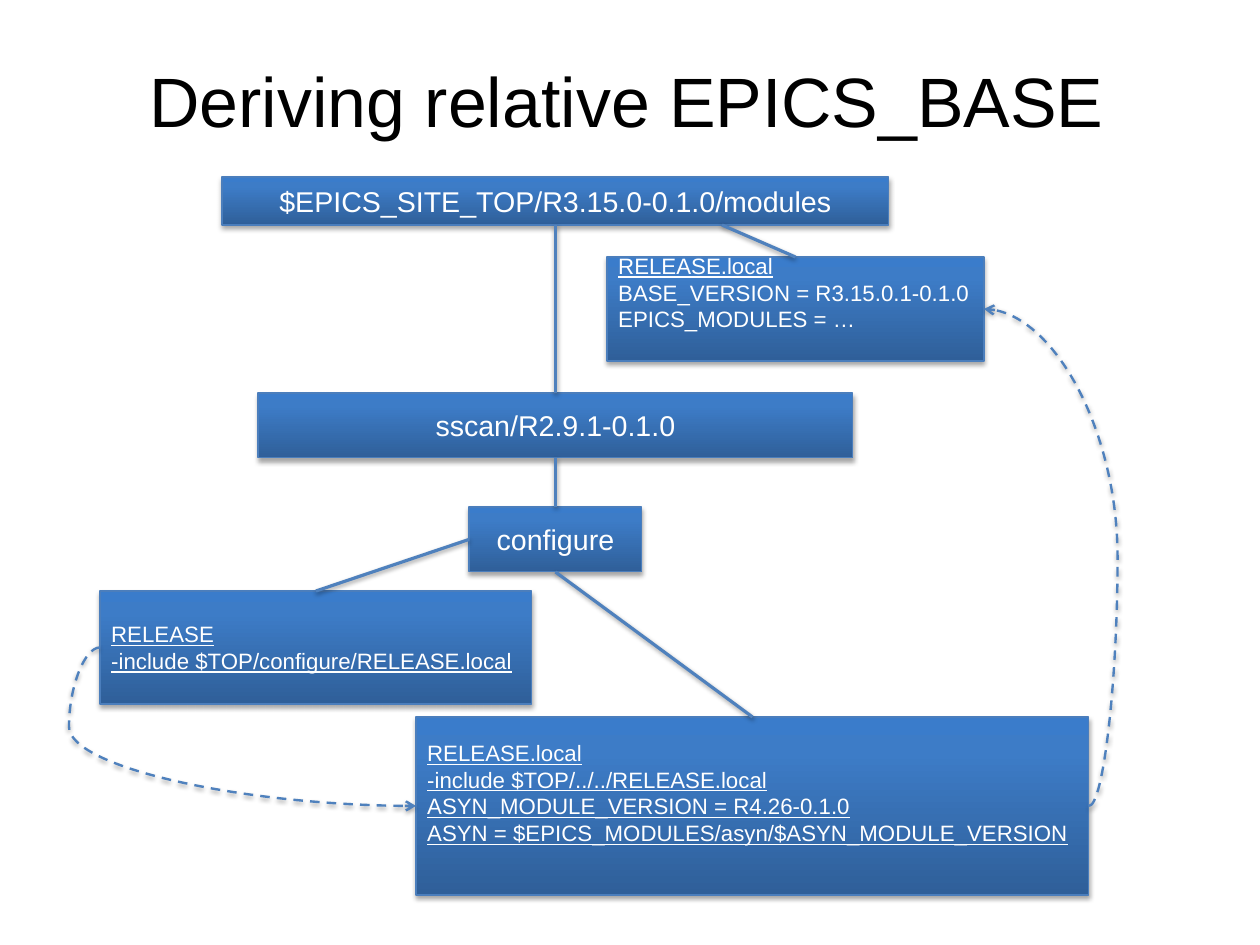
from copy import deepcopy

from lxml import etree
from pptx import Presentation
from pptx.dml.color import RGBColor
from pptx.enum.dml import MSO_LINE
from pptx.enum.shapes import MSO_CONNECTOR, MSO_SHAPE
from pptx.enum.text import MSO_ANCHOR, PP_ALIGN
from pptx.oxml.ns import qn
from pptx.util import Pt

PX = 8000  # the slide, 28 by 21 cm, is 1260 by 945 px
FONT = "Arial"
BLACK = RGBColor(0x00, 0x00, 0x00)
WHITE = RGBColor(0xFF, 0xFF, 0xFF)
BOX_LINE = RGBColor(0x4B, 0x7E, 0xBC)
LINK_LINE = RGBColor(0x4F, 0x81, 0xBD)
BOX_GRADIENT = [
    (0, RGBColor(0x2F, 0x5F, 0x99)),
    (0.8, RGBColor(0x3D, 0x7C, 0xC7)),
    (1, RGBColor(0x3A, 0x7C, 0xCB)),
]
RECTANGLE = MSO_SHAPE.RECTANGLE
STRAIGHT, CURVE = MSO_CONNECTOR.STRAIGHT, MSO_CONNECTOR.CURVE
DASH = MSO_LINE.DASH
MIDDLE = MSO_ANCHOR.MIDDLE
LEFT_ALIGN, CENTER = PP_ALIGN.LEFT, PP_ALIGN.CENTER
TITLE_ONLY = 5
TOP, LEFT, BOTTOM, RIGHT = range(4)  # connection sites of a rectangle


def add_shadow(shape, distance, opacity):
    """Give the shape a soft black shadow that falls straight down."""
    effects = etree.SubElement(shape._element.spPr, qn("a:effectLst"))
    shadow = etree.SubElement(
        effects, qn("a:outerShdw"), blurRad=str(Pt(3.1)),
        dist=str(Pt(distance)), dir="5400000", rotWithShape="0")
    color = etree.SubElement(shadow, qn("a:srgbClr"), val=str(BLACK))
    etree.SubElement(color, qn("a:alpha"), val=str(opacity * 1000))


def write_text(text_frame, lines, size, color, align=CENTER, underlined=0):
    """Write one paragraph per line; the first `underlined` ones get a rule."""
    text_frame.word_wrap = True
    text_frame.vertical_anchor = MIDDLE
    for index, line in enumerate(lines):
        paragraph = text_frame.paragraphs[0] if index == 0 else text_frame.add_paragraph()
        paragraph.alignment = align
        run = paragraph.add_run()
        run.text = line
        run.font.name = FONT
        run.font.size = Pt(size)
        run.font.color.rgb = color
        run.font.underline = index < underlined


class DiagramSlide:
    def __init__(self, presentation):
        self.slide = presentation.slides.add_slide(presentation.slide_layouts[TITLE_ONLY])
        self.shapes = self.slide.shapes

    def title(self, text, left, top, width, height):
        title = self.shapes.title
        title.left, title.top = left * PX, top * PX
        title.width, title.height = width * PX, height * PX
        frame = title.text_frame
        frame.margin_left = frame.margin_right = 0
        frame.margin_top = frame.margin_bottom = 0
        write_text(frame, [text], 44, BLACK)

    def box(self, lines, left, top, width, height, bottom_margin=6, **text_format):
        box = self.shapes.add_shape(
            RECTANGLE, left * PX, top * PX, width * PX, height * PX)
        box.shadow.inherit = False
        box.fill.gradient()
        box.fill.gradient_angle = 90
        properties = box._element.spPr
        stop_list = properties.find(qn("a:gradFill")).find(qn("a:gsLst"))
        stop_list.append(deepcopy(stop_list[0]))
        for stop, (position, color) in zip(box.fill.gradient_stops, BOX_GRADIENT):
            stop.position = position
            stop.color.rgb = color
        box.line.color.rgb = BOX_LINE
        box.line.width = Pt(0.75)
        properties.remove(properties.find(qn("a:effectLst")))
        add_shadow(box, 1.8, 35)
        box.text_frame.margin_bottom = bottom_margin * PX
        write_text(box.text_frame, lines, color=WHITE, **text_format)
        return box

    def folder(self, name, *place):
        return self.box([name], *place, size=18)

    def file(self, lines, *place, underlined, bottom_margin=6):
        return self.box(lines, *place, bottom_margin=bottom_margin, size=14,
                        align=LEFT_ALIGN, underlined=underlined)

    def link(self, end, end_site, start=None, start_site=BOTTOM, start_point=(0, 0),
             kind=STRAIGHT, width=2):
        """Join a box site, or a free point, to a site of the end box."""
        x, y = (value * PX for value in start_point)
        connector = self.shapes.add_connector(kind, x, y, x, y)
        if start is not None:
            connector.begin_connect(start, start_site)
        connector.end_connect(end, end_site)
        connector.line.color.rgb = LINK_LINE
        connector.line.width = Pt(width)
        add_shadow(connector, 1.6, 38)
        return connector

    def include_arrow(self, start, end, start_site, end_site, bend):
        """Draw a dashed curve; bend is its turning point in 1/100000 of its width."""
        arrow = self.link(end, end_site, start, start_site, kind=CURVE, width=1.5)
        arrow.line.dash_style = DASH
        properties = arrow._element.spPr
        etree.SubElement(properties.find(qn("a:ln")), qn("a:tailEnd"), type="arrow")
        geometry = properties.find(qn("a:prstGeom"))
        adjustments = geometry.find(qn("a:avLst"))
        if adjustments is None:
            adjustments = etree.SubElement(geometry, qn("a:avLst"))
        etree.SubElement(adjustments, qn("a:gd"), name="adj1", fmla=f"val {bend}")


def main():
    presentation = Presentation()
    presentation.slide_width = 1260 * PX
    presentation.slide_height = 945 * PX
    diagram = DiagramSlide(presentation)
    diagram.title("Deriving relative EPICS_BASE ", 70, 48, 1134, 103)

    modules = diagram.folder("$EPICS_SITE_TOP/R3.15.0-0.1.0/modules", 222, 177, 667, 48)
    modules_local = diagram.file(
        ["RELEASE.local", "BASE_VERSION = R3.15.0.1-0.1.0", "EPICS_MODULES = …"],
        607, 257, 377, 104, underlined=1, bottom_margin=39)
    sscan = diagram.folder("sscan/R2.9.1-0.1.0", 258, 393, 595, 65)
    sscan_local = diagram.file(
        ["RELEASE.local",
         "-include $TOP/../../RELEASE.local",
         "ASYN_MODULE_VERSION = R4.26-0.1.0",
         "ASYN = $EPICS_MODULES/asyn/$ASYN_MODULE_VERSION"],
        416, 717, 673, 178, underlined=4, bottom_margin=32)
    configure = diagram.folder("configure", 469, 507, 173, 65)
    release = diagram.file(
        ["RELEASE", "-include $TOP/configure/RELEASE.local"],
        100, 591, 432, 113, underlined=2)

    diagram.link(modules_local, TOP, start_point=(722, 225))
    diagram.link(sscan, TOP, modules)
    diagram.link(configure, TOP, sscan)
    diagram.link(sscan_local, TOP, configure)
    diagram.link(release, TOP, configure, LEFT)
    diagram.include_arrow(sscan_local, modules_local, RIGHT, RIGHT, -27300)
    diagram.include_arrow(release, sscan_local, LEFT, LEFT, -9800)

    presentation.save("out.pptx")


if __name__ == "__main__":
    main()
